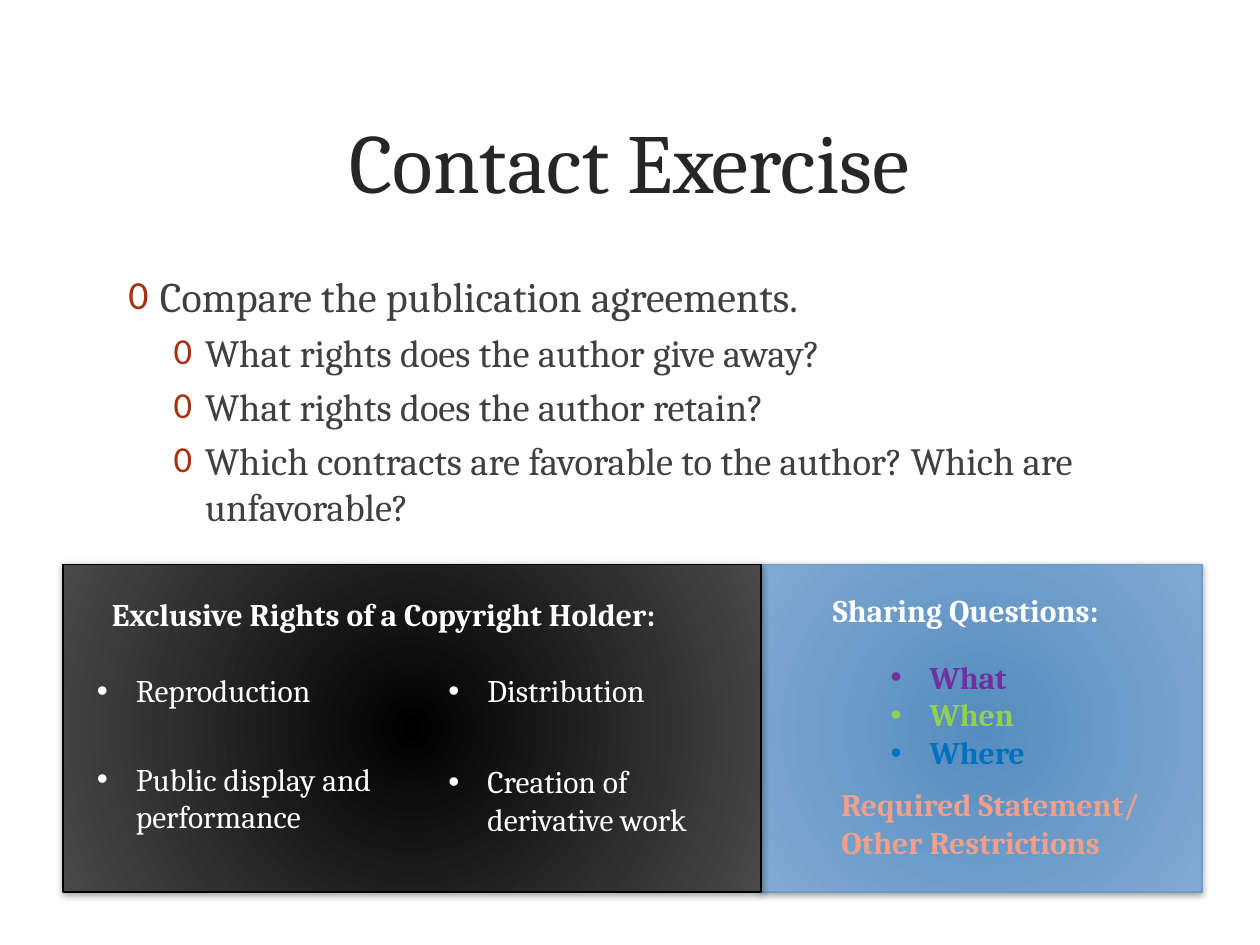
from lxml import etree
from pptx import Presentation
from pptx.dml.color import RGBColor
from pptx.enum.shapes import MSO_SHAPE
from pptx.enum.text import MSO_ANCHOR, MSO_AUTO_SIZE, PP_ALIGN
from pptx.oxml.ns import qn
from pptx.util import Inches, Pt

RECT = MSO_SHAPE.RECTANGLE
MIDDLE = MSO_ANCHOR.MIDDLE
GROW = MSO_AUTO_SIZE.SHAPE_TO_FIT_TEXT
CENTER = PP_ALIGN.CENTER
FONT = "Cambria"
COLORS = {
    "title": "262626", "body": "404040", "mark": "A63212",
    "white": "FFFFFF", "black": "000000", "gray": "494949",
    "blue": "558CBF", "sky": "81AAD3", "edge": "6B9BC7",
    "what": "7030A0", "when": "92D050", "where": "0070C0", "note": "F2A089",
}


def rgb(name):
    return RGBColor.from_string(COLORS[name])


def add_node(parent, tag, **attrs):
    node = etree.SubElement(parent, qn(tag))
    for key, value in attrs.items():
        node.set(key, str(value))
    return node


def add_run(para, text, size, color, bold=False):
    run = para.add_run()
    run.text = text
    font = run.font
    font.name, font.size, font.bold = FONT, Pt(size), bold
    font.color.rgb = rgb(color)


def add_bullet(para, char, left, hang, face, color=None):
    props = para._p.get_or_add_pPr()
    props.set("marL", str(Inches(left)))
    props.set("indent", str(-Inches(hang)))
    if color:
        add_node(add_node(props, "a:buClr"), "a:srgbClr", val=COLORS[color])
        add_node(props, "a:buSzPct", val=95000)
    add_node(props, "a:buFont", typeface=face)
    add_node(props, "a:buChar", char=char)


def add_panel(slide, left, width, inner, outer, edge):
    panel = slide.shapes.add_shape(
        RECT, Inches(left), Inches(4.48), Inches(width), Inches(2.6))
    panel.fill.gradient()
    for stop, color in zip(panel.fill.gradient_stops, (inner, outer)):
        stop.color.rgb = rgb(color)
    props = panel._element.spPr
    grad = props.find(qn("a:gradFill"))
    grad.remove(grad.find(qn("a:lin")))
    round_path = etree.Element(qn("a:path"), path="circle")
    add_node(round_path, "a:fillToRect", l=40000, t=100000, r=40000, b=100000)
    grad.find(qn("a:gsLst")).addnext(round_path)
    panel.line.color.rgb = rgb(edge)
    panel.line.width = Pt(0.75)
    panel.shadow.inherit = False
    shade = add_node(props.find(qn("a:effectLst")), "a:outerShdw",
                     blurRad=Pt(4), dist=Pt(1), dir=5400000, rotWithShape=0)
    tone = add_node(shade, "a:srgbClr", val=COLORS["black"])
    add_node(tone, "a:alpha", val=37000)


def add_box(slide, left, top, width, height):
    box = slide.shapes.add_textbox(
        Inches(left), Inches(top), Inches(width), Inches(height))
    box.text_frame.word_wrap = True
    return box.text_frame


def add_lines(slide, place, lines, bold=False, dots=False, align=None):
    frame = add_box(slide, *place)
    frame.auto_size = GROW
    for i, (text, color) in enumerate(lines):
        para = frame.add_paragraph() if i else frame.paragraphs[0]
        if dots:
            add_bullet(para, "•", 0.31, 0.31, "Arial")
        para.alignment = align
        add_run(para, text, 18, color, bold)


def add_title(slide, text):
    title = slide.shapes.title
    title.left, title.top = Inches(0.6), Inches(0.48)
    title.width, title.height = Inches(8.79), Inches(1.58)
    frame = title.text_frame
    frame.vertical_anchor = MIDDLE
    para = frame.paragraphs[0]
    para.alignment = CENTER
    add_run(para, text, 48, "title")


def add_body(slide, lead, points):
    frame = add_box(slide, 0.92, 2.1, 8.17, 4.32)
    para = frame.paragraphs[0]
    add_bullet(para, "0", 0.25, 0.25, "Calibri", "mark")
    add_run(para, lead, 24, "body")
    for text in points:
        para = frame.add_paragraph()
        para.level = 1
        add_bullet(para, "0", 0.61, 0.25, "Calibri", "mark")
        para.space_before = Pt(4.4)
        add_run(para, text, 22, "body")


def main():
    deck = Presentation()
    deck.slide_width, deck.slide_height = Inches(10), Inches(7.5)
    slide = deck.slides.add_slide(deck.slide_layouts[5])
    add_panel(slide, 6.04, 3.5, "blue", "sky", "edge")
    add_panel(slide, 0.5, 5.54, "black", "gray", "black")
    add_title(slide, "Contact Exercise")
    add_body(slide, "Compare the publication agreements.", [
        "What rights does the author give away?",
        "What rights does the author retain?",
        "Which contracts are favorable to the author? Which are unfavorable?",
    ])
    heads = [
        ("Exclusive Rights of a Copyright Holder:", 0.67, 4.67, 4.75),
        ("Sharing Questions:", 6.33, 4.64, 2.67),
    ]
    for text, left, top, width in heads:
        add_lines(slide, (left, top, width, 0.4), [(text, "white")],
                  bold=True, align=CENTER)
    rights = [
        ("Reproduction", 0.67, 5.28, 0.4),
        ("Distribution", 3.46, 5.28, 0.4),
        ("Public display and performance", 0.67, 5.98, 0.71),
        ("Creation of derivative work", 3.46, 6, 0.71),
    ]
    for text, left, top, height in rights:
        add_lines(slide, (left, top, 2.58, height), [(text, "white")],
                  dots=True)
    add_lines(slide, (6.97, 5.17, 1.46, 1.01),
              [("What", "what"), ("When", "when"), ("Where", "where")],
              bold=True, dots=True)
    add_lines(slide, (6.58, 6.18, 2.67, 0.71),
              [("Required Statement/", "note"), ("Other Restrictions", "note")],
              bold=True)
    deck.save("out.pptx")


if __name__ == "__main__":
    main()
